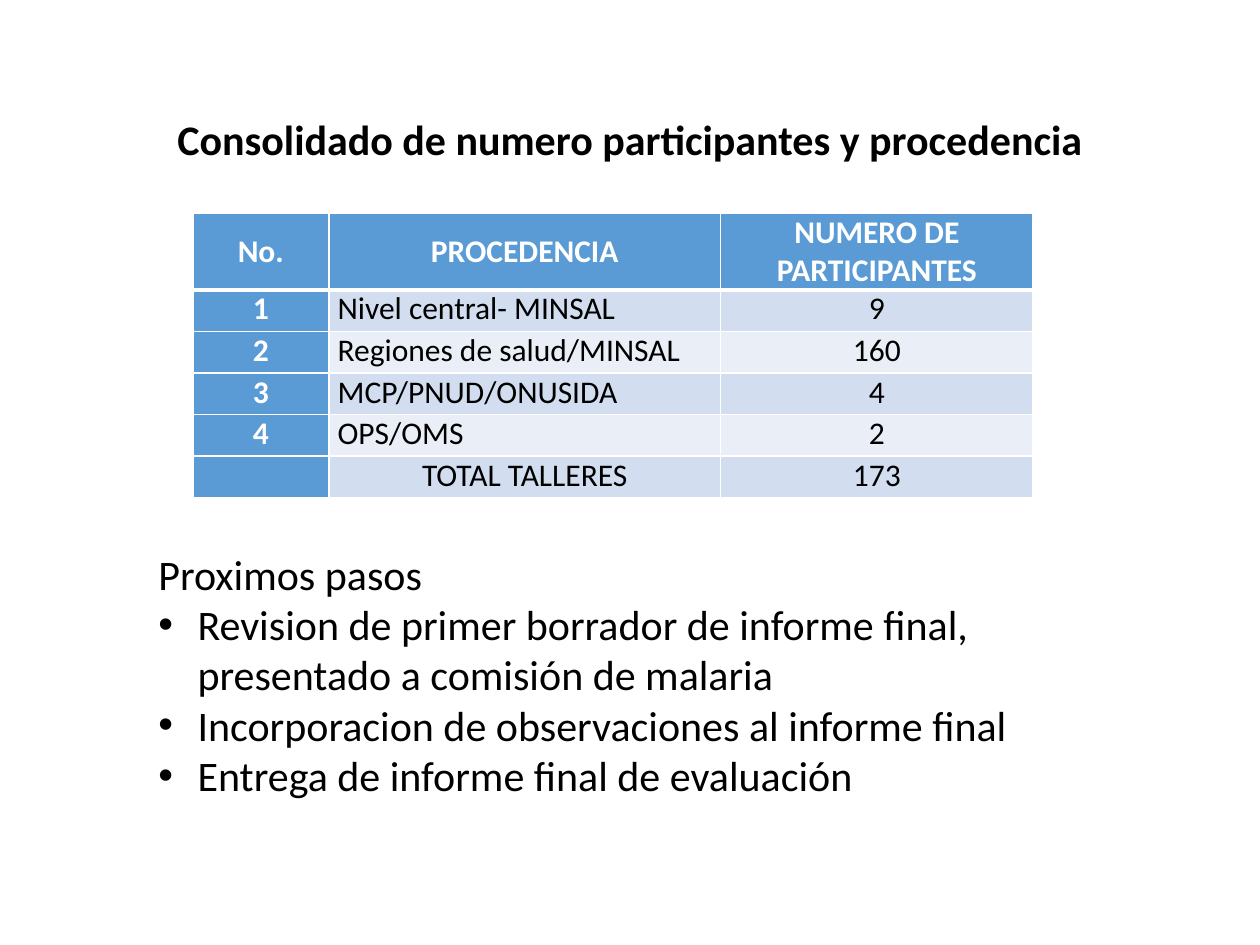
from lxml import etree
from pptx import Presentation
from pptx import util as u
from pptx.dml.color import RGBColor
from pptx.enum import text
from pptx.oxml import ns

TITLE = "Consolidado de numero participantes y procedencia"
ROWS = [
    ("No.", "PROCEDENCIA", "NUMERO DE PARTICIPANTES"),
    ("1", "Nivel central- MINSAL", "9"),
    ("2", "Regiones de salud/MINSAL", "160"),
    ("3", "MCP/PNUD/ONUSIDA", "4"),
    ("4", "OPS/OMS", "2"),
    ("", "TOTAL TALLERES", "173"),
]
COL_WIDTHS = (1.08, 3.11, 2.48)
HEADER_HEIGHT, ROW_HEIGHT = 0.58, 0.33
STEPS_HEADING = "Proximos pasos"
STEPS = [
    "Revision de primer borrador de informe final, presentado a comisión de malaria",
    "Incorporacion de observaciones al informe final",
    "Entrega de informe final de evaluación",
]
BLUE, BANDS = "5B9BD5", ("EAEFF7", "D2DEEF")
WHITE, BLACK = "FFFFFF", "000000"
LEFT, CENTER = text.PP_ALIGN.LEFT, text.PP_ALIGN.CENTER
TOP, MIDDLE = text.MSO_ANCHOR.TOP, text.MSO_ANCHOR.MIDDLE


def rgb(value):
    """Return the colour for a hex string."""
    return RGBColor.from_string(value)


def set_attrs(obj, values):
    """Set attributes of an object from a dict."""
    for name, value in values.items():
        setattr(obj, name, value)


def write(p, content, size, color=BLACK, bold=False, align=LEFT):
    """Write one formatted run into a paragraph."""
    p.alignment = align
    if content:
        r = p.add_run()
        r.text = content
        set_attrs(r.font, {"name": "Calibri", "size": u.Pt(size), "bold": bold})
        r.font.color.rgb = rgb(color)


def place(sp, left, top, width, height):
    """Set the position and size of a shape in inches."""
    set_attrs(sp, {"left": u.Inches(left), "top": u.Inches(top),
                   "width": u.Inches(width), "height": u.Inches(height)})


def add_title(s):
    """Fill and place the title placeholder."""
    sp = s.shapes.title
    place(sp, 0.69, 0.4, 8.62, 1.45)
    set_attrs(sp.text_frame, {"word_wrap": True, "vertical_anchor": MIDDLE})
    p = sp.text_frame.paragraphs[0]
    p.line_spacing = 0.9
    write(p, TITLE, 24, bold=True, align=CENTER)


def add_borders(cell, bottom):
    """Draw white borders around a table cell."""
    tc_pr = cell._tc.get_or_add_tcPr()
    for side, width in {"L": 1, "R": 1, "T": 1, "B": bottom}.items():
        ln = etree.SubElement(tc_pr, ns.qn(f"a:ln{side}"), w=str(u.Pt(width)))
        fill = etree.SubElement(ln, ns.qn("a:solidFill"))
        etree.SubElement(fill, ns.qn("a:srgbClr"), val=WHITE)


def format_cell(cell, content, row, col):
    """Format a cell by its place in the table."""
    header, accent = row == 0, row == 0 or col == 0
    add_borders(cell, 3 if header else 1)
    cell.fill.solid()
    cell.fill.fore_color.rgb = rgb(BLUE if accent else BANDS[row % 2])
    set_attrs(cell, {"margin_left": u.Inches(0.07), "margin_right": u.Inches(0.07),
                     "margin_top": 0, "margin_bottom": 0,
                     "vertical_anchor": MIDDLE if header else TOP})
    is_name = col == 1 and 0 < row < len(ROWS) - 1
    write(cell.text_frame.paragraphs[0], content, 18, WHITE if accent else BLACK,
          accent, LEFT if is_name else CENTER)


def add_participants(s):
    """Add the table of participants by origin."""
    heights = [HEADER_HEIGHT] + [ROW_HEIGHT] * (len(ROWS) - 1)
    table = s.shapes.add_table(
        len(ROWS), len(COL_WIDTHS), u.Inches(1.53), u.Inches(1.69),
        u.Inches(sum(COL_WIDTHS)), u.Inches(sum(heights))).table
    for column, width in zip(table.columns, COL_WIDTHS):
        column.width = u.Inches(width)
    for i, (row, height) in enumerate(zip(ROWS, heights)):
        table.rows[i].height = u.Inches(height)
        for j, content in enumerate(row):
            format_cell(table.cell(i, j), content, i, j)


def add_bullet(p):
    """Give a paragraph a hanging bullet."""
    p_pr = p._p.get_or_add_pPr()
    indent = u.Inches(0.31)
    p_pr.set("marL", str(indent))
    p_pr.set("indent", str(-indent))
    etree.SubElement(p_pr, ns.qn("a:buFont"), typeface="Arial")
    etree.SubElement(p_pr, ns.qn("a:buChar"), char="•")


def add_steps(s):
    """Add the heading and bullets of the next steps."""
    tf = s.shapes.add_textbox(u.Inches(1.16), u.Inches(4.3),
                              u.Inches(7.67), u.Inches(2.12)).text_frame
    set_attrs(tf, {"word_wrap": True,
                   "auto_size": text.MSO_AUTO_SIZE.SHAPE_TO_FIT_TEXT})
    write(tf.paragraphs[0], STEPS_HEADING, 24)
    for step in STEPS:
        p = tf.add_paragraph()
        add_bullet(p)
        write(p, step, 24)


def main():
    """Build and save the slide."""
    prs = Presentation()
    set_attrs(prs, {"slide_width": u.Inches(10), "slide_height": u.Inches(7.5)})
    s = prs.slides.add_slide(prs.slide_layouts[5])
    add_title(s)
    add_participants(s)
    add_steps(s)
    prs.save("out.pptx")


if __name__ == "__main__":
    main()
